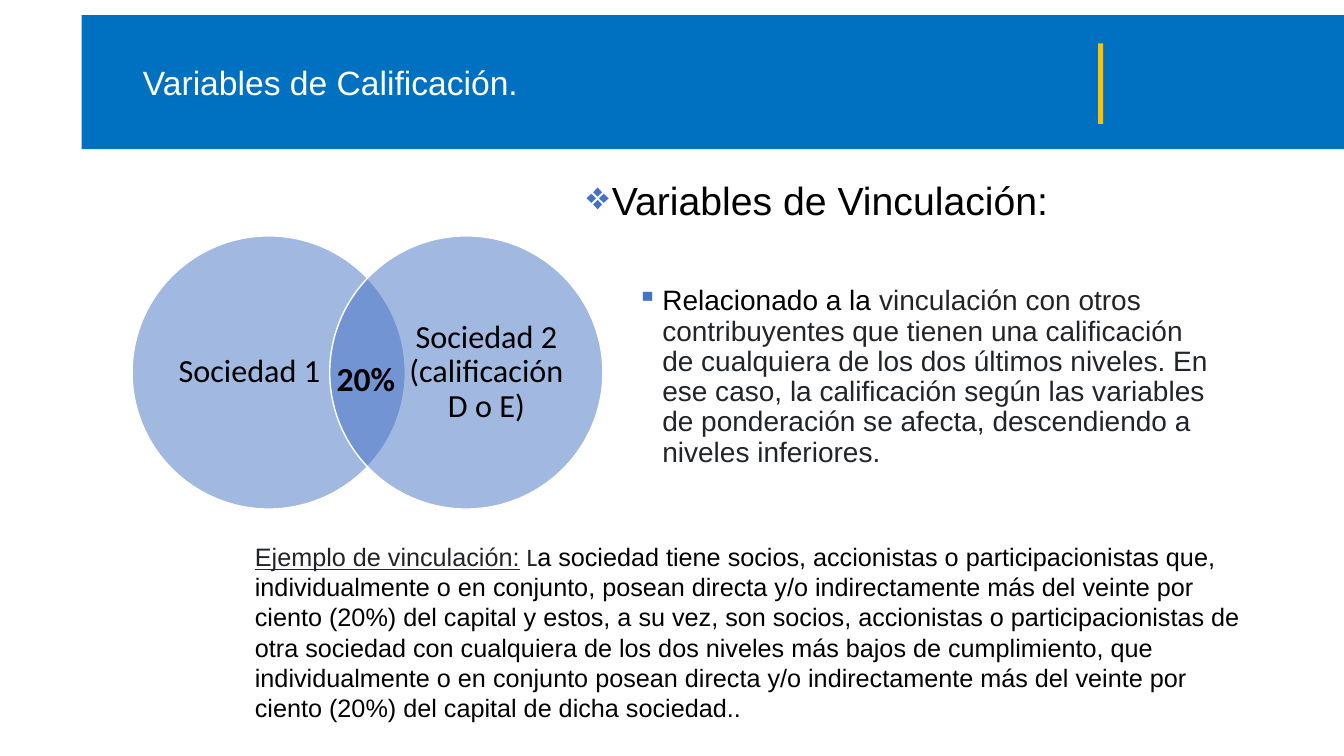
from lxml import etree
from pptx import Presentation
from pptx.dml import color
from pptx.enum import shapes, text
from pptx.oxml import ns
from pptx.util import Inches, Pt

COLORS = {"band": "0070C0", "bar": "FFC000", "disc": "4472C4",
          "white": "FFFFFF", "black": "000000", "ink": "212529"}


def rgb(name):
    return color.RGBColor.from_string(COLORS[name])


class Deck:
    def __init__(self):
        self.prs = Presentation()
        self.prs.slide_width = Inches(13.33)
        self.prs.slide_height = Inches(7.5)
        self.slide = self.prs.slides.add_slide(self.prs.slide_layouts[6])
        self.font = "Arial"

    def shape(self, kind, box, fill, alpha=None, line=None):
        item = self.slide.shapes.add_shape(kind, *map(Inches, box))
        item.shadow.inherit = False
        item.fill.solid()
        item.fill.fore_color.rgb = rgb(fill)
        if alpha:
            tint = item.element.spPr.find(".//" + ns.qn("a:srgbClr"))
            etree.SubElement(tint, ns.qn("a:alpha"), val=str(alpha * 1000))
        if line:
            item.line.color.rgb = rgb(line)
            item.line.width = Pt(1)
        else:
            item.line.fill.background()

    def box(self, box, middle=False, inset=True):
        frame = self.slide.shapes.add_textbox(*map(Inches, box)).text_frame
        frame.word_wrap = True
        if middle:
            frame.vertical_anchor = text.MSO_ANCHOR.MIDDLE
        if not inset:
            frame.margin_left = frame.margin_right = 0
            frame.margin_top = frame.margin_bottom = 0
        return frame

    def indent(self, par, left, hang=0, bullet=None):
        """Set the left margin and, if given, a hanging bullet."""
        props = par._p.get_or_add_pPr()
        props.set("marL", str(Inches(left)))
        props.set("indent", str(Inches(-hang)))
        if bullet:
            tint = etree.SubElement(props, ns.qn("a:buClr"))
            etree.SubElement(tint, ns.qn("a:srgbClr"), val=COLORS["disc"])
            etree.SubElement(props, ns.qn("a:buChar"), char=bullet)

    def words(self, par, size, *parts, spacing=None, before=None, center=False):
        """Add runs, each given as (wording, colour, font settings)."""
        if spacing:
            par.line_spacing = spacing
        if before:
            par.space_before = Pt(before)
        if center:
            par.alignment = text.PP_ALIGN.CENTER
        for wording, ink, extra in parts:
            run = par.add_run()
            run.text = wording
            run.font.size = Pt(size)
            run.font.color.rgb = rgb(ink)
            run.font.name = extra.get("name", self.font)
            run.font.bold = extra.get("bold")
            run.font.underline = extra.get("underline")


def main():
    deck = Deck()
    rect, oval = shapes.MSO_SHAPE.RECTANGLE, shapes.MSO_SHAPE.OVAL
    label_font = {"name": "Calibri"}

    deck.shape(rect, (0.81, 0.15, 12.52, 1.33), "band")
    deck.shape(rect, (10.89, 0.43, 0.05, 0.8), "bar")

    body = deck.box((5.72, 1.75, 6.41, 3.12))
    head = body.paragraphs[0]
    deck.indent(head, 0.25, 0.25, "❖")
    deck.words(head, 28, ("Variables de Vinculación:", "black", {}), spacing=0.9)
    point = body.add_paragraph()
    deck.indent(point, 0.75, 0.25, "▪")
    deck.words(point, 20, ("Relacionado a la ", "black", {}),
               ("vinculación con otros contribuyentes que tienen una calificación "
                "de cualquiera de los dos últimos niveles. En ese caso, la "
                "calificación según las variables de ponderación se afecta, "
                "descendiendo a niveles inferiores.", "ink", {}),
               spacing=0.9, before=45)

    title = deck.box((1.32, 0.36, 6.1, 0.95), middle=True)
    deck.words(title.paragraphs[0], 24,
               ("Variables de Calificación.", "white", {}), spacing=0.9)

    case = deck.box((1.43, 5.32, 11.13, 1.92)).paragraphs[0]
    deck.indent(case, 1)
    deck.words(case, 18, ("Ejemplo de vinculación:", "ink", {"underline": True}),
               (" ", "ink", {}), ("L", "ink", label_font),
               ("a sociedad tiene socios, accionistas o participacionistas que, "
                "individualmente o en conjunto, posean directa y/o indirectamente "
                "más del veinte por ciento (20%) del capital y estos, a su vez, "
                "son socios, accionistas o participacionistas de otra sociedad "
                "con cualquiera de los dos niveles más bajos de cumplimiento, que "
                "individualmente o en conjunto posean directa y/o indirectamente "
                "más del veinte por ciento (20%) del capital de dicha sociedad..",
                "black", {}))

    discs = ((1.31, 1.69, "Sociedad 1"),
             (3.27, 4.04, "Sociedad 2 (calificación D o E)"))
    for left, inner, label in discs:
        deck.shape(oval, (left, 2.34, 2.71, 2.71), "disc", 50, "white")
        frame = deck.box((inner, 2.66, 1.57, 2.07), middle=True, inset=False)
        deck.words(frame.paragraphs[0], 23, (label, "black", label_font),
                   spacing=0.9, center=True)

    share = deck.box((3.24, 3.5, 0.82, 0.5))
    deck.words(share.paragraphs[0], 24,
               ("20%", "black", {**label_font, "bold": True}))

    deck.prs.save("out.pptx")


if __name__ == "__main__":
    main()
